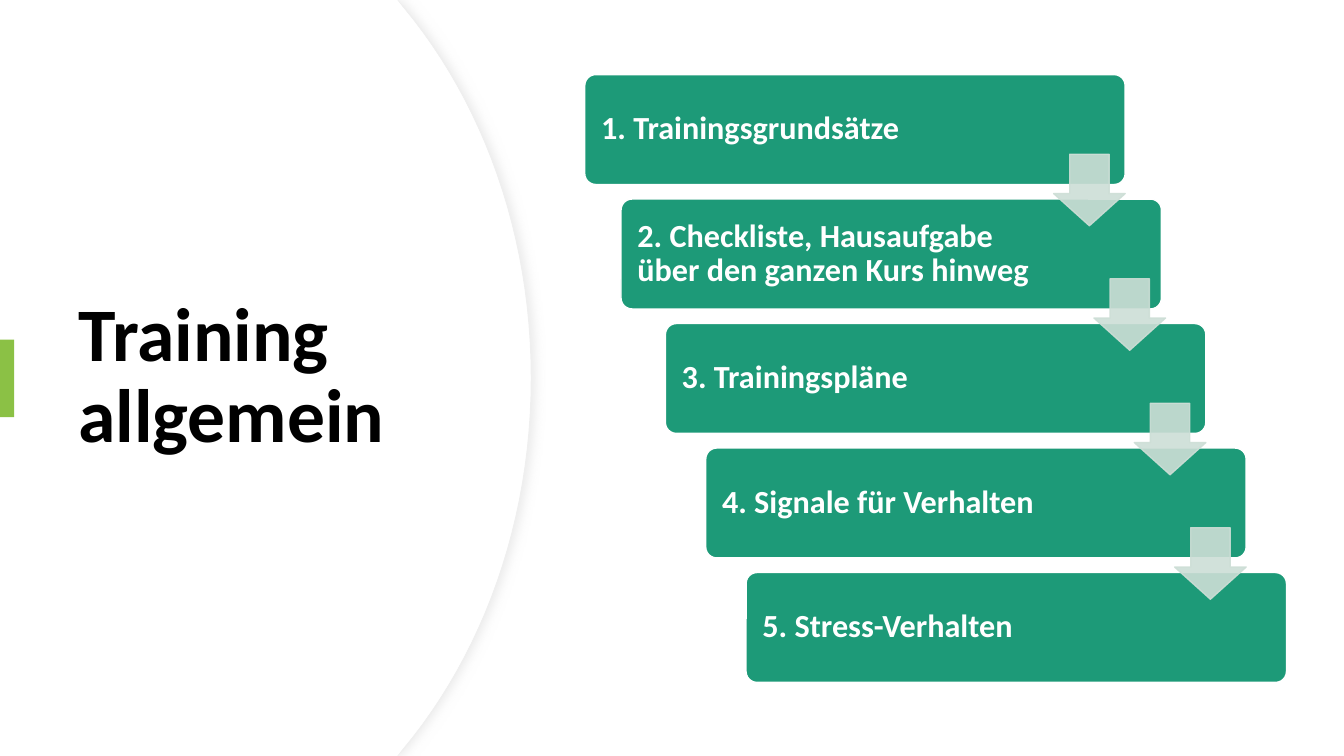
from lxml.etree import SubElement
from pptx import Presentation
from pptx.dml.color import RGBColor
from pptx.enum.shapes import MSO_SHAPE
from pptx.enum.text import MSO_ANCHOR, PP_ALIGN
from pptx.oxml.ns import qn
from pptx.util import Inches, Pt

WHITE = RGBColor(0xFF, 0xFF, 0xFF)
BLACK = RGBColor(0, 0, 0)
GREEN = RGBColor(0x1D, 0x9A, 0x78)
LIME = RGBColor(0x8B, 0xC1, 0x45)
PALE_GREEN = RGBColor(0xCD, 0xDE, 0xD6)
PALE_GREY = RGBColor(0xEF, 0xEF, 0xEF)
SHADOW_GREY = RGBColor(0xD9, 0xD9, 0xD9)

TITLE_FONT = {"name": "Calibri", "size": Pt(54), "bold": True}
STEP_FONT = {"name": "Calibri", "size": Pt(23), "bold": True}
STEPS = [
    (5.8, "1. Trainingsgrundsätze"),
    (6.16, "2. Checkliste, Hausaufgabe über den ganzen Kurs hinweg"),
    (6.6, "3. Trainingspläne"),
    (7, "4. Signale für Verhalten"),
    (7.4, "5. Stress-Verhalten"),
]


def paint(shape, fill, line=None, width=1):
    shape.shadow.inherit = False
    shape.fill.solid()
    shape.fill.fore_color.rgb = fill
    if line is None:
        shape.line.fill.background()
    else:
        shape.line.color.rgb = line
        shape.line.width = Pt(width)


def write(shape, text, font, color, margins):
    frame = shape.text_frame
    frame.word_wrap = True
    frame.vertical_anchor = MSO_ANCHOR.MIDDLE
    for name, value in margins.items():
        setattr(frame, name, Inches(value))
    para = frame.paragraphs[0]
    para.alignment = PP_ALIGN.LEFT
    para.line_spacing = 0.9
    span = para.add_run()
    span.text = text
    for name, value in font.items():
        setattr(span.font, name, value)
    span.font.color.rgb = color


def bezier(start, control_1, control_2, end, count=24):
    for index in range(1, count + 1):
        t = index / count
        weights = ((1 - t) ** 3, 3 * t * (1 - t) ** 2, 3 * t * t * (1 - t), t ** 3)
        yield tuple(sum(w * p[axis] for w, p in zip(weights, (start, control_1, control_2, end)))
                    for axis in (0, 1))


def add_disc(page, right, height):
    """Panel from the left edge with a bulging right side."""
    middle = height / 2
    shoulder = (right - 1.26, 0.08)
    upper = list(bezier(shoulder, (right - 0.48, 1.02), (right, 2.32), (right, middle)))
    lower = [(x, height - y) for x, y in reversed(upper[:-1])]
    points = [(3.94, 0), shoulder, *upper, *lower,
              (shoulder[0], height - shoulder[1]), (3.94, height), (0, height)]
    builder = page.shapes.build_freeform(0, 0)
    builder.add_line_segments([(Inches(x), Inches(y)) for x, y in points], close=True)
    return builder.convert_to_shape()


def add_soft_shadow(shape):
    effects = shape._element.spPr.find(qn("a:effectLst"))
    shadow = SubElement(effects, qn("a:outerShdw"), blurRad=str(Pt(7)), dist=str(Pt(3)),
                        dir="0", algn="l", rotWithShape="0")
    color = SubElement(shadow, qn("a:srgbClr"), val=str(SHADOW_GREY))
    SubElement(color, qn("a:alpha"), val="50000")


def add_title_panel(page, height):
    # Curved background with its edge
    edge = add_disc(page, 5.27, height)
    paint(edge, WHITE, PALE_GREY, 0.75)
    add_soft_shadow(edge)
    paint(add_disc(page, 5.26, height), WHITE)

    # Title and accent bar
    title = page.shapes.add_textbox(Inches(0.68), Inches(1.27), Inches(3.94), Inches(4.95))
    write(title, "Training allgemein", TITLE_FONT, BLACK, {})
    accent = page.shapes.add_shape(MSO_SHAPE.RECTANGLE, 0, Inches(3.37), Inches(0.14), Inches(0.77))
    paint(accent, LIME)


def add_staircase(page, top, bottom, box_width=5.36, box_height=1.09, arrow_size=0.71):
    pitch = (bottom - top - box_height) / (len(STEPS) - 1)

    # Steps; the wide right margin keeps text clear of the arrows
    margins = {"margin_left": 0.13, "margin_right": 1.24, "margin_top": 0.13, "margin_bottom": 0.13}
    for index, (left, text) in enumerate(STEPS):
        step = page.shapes.add_shape(MSO_SHAPE.ROUNDED_RECTANGLE, Inches(left),
                                     Inches(top + index * pitch), Inches(box_width), Inches(box_height))
        step.adjustments[0] = 0.1
        paint(step, GREEN, WHITE)
        write(step, text, STEP_FONT, WHITE, margins)

    # Arrows between the steps
    first_left = STEPS[0][0] + box_width - arrow_size
    for index in range(len(STEPS) - 1):
        arrow = page.shapes.add_shape(MSO_SHAPE.DOWN_ARROW, Inches(first_left + index * 0.4),
                                      Inches(top + 0.79 + index * pitch),
                                      Inches(arrow_size), Inches(arrow_size))
        arrow.adjustments[0], arrow.adjustments[1] = 0.55, 0.45
        paint(arrow, PALE_GREEN, PALE_GREEN)
        for color in arrow._element.spPr.iter(qn("a:srgbClr")):
            SubElement(color, qn("a:alpha"), val="90000")


def main():
    deck = Presentation()
    deck.slide_width, deck.slide_height = Inches(13.33), Inches(7.5)
    page = deck.slides.add_slide(deck.slide_layouts[6])
    add_title_panel(page, 7.5)
    add_staircase(page, 0.74, 6.77)
    deck.save("out.pptx")


if __name__ == "__main__":
    main()
